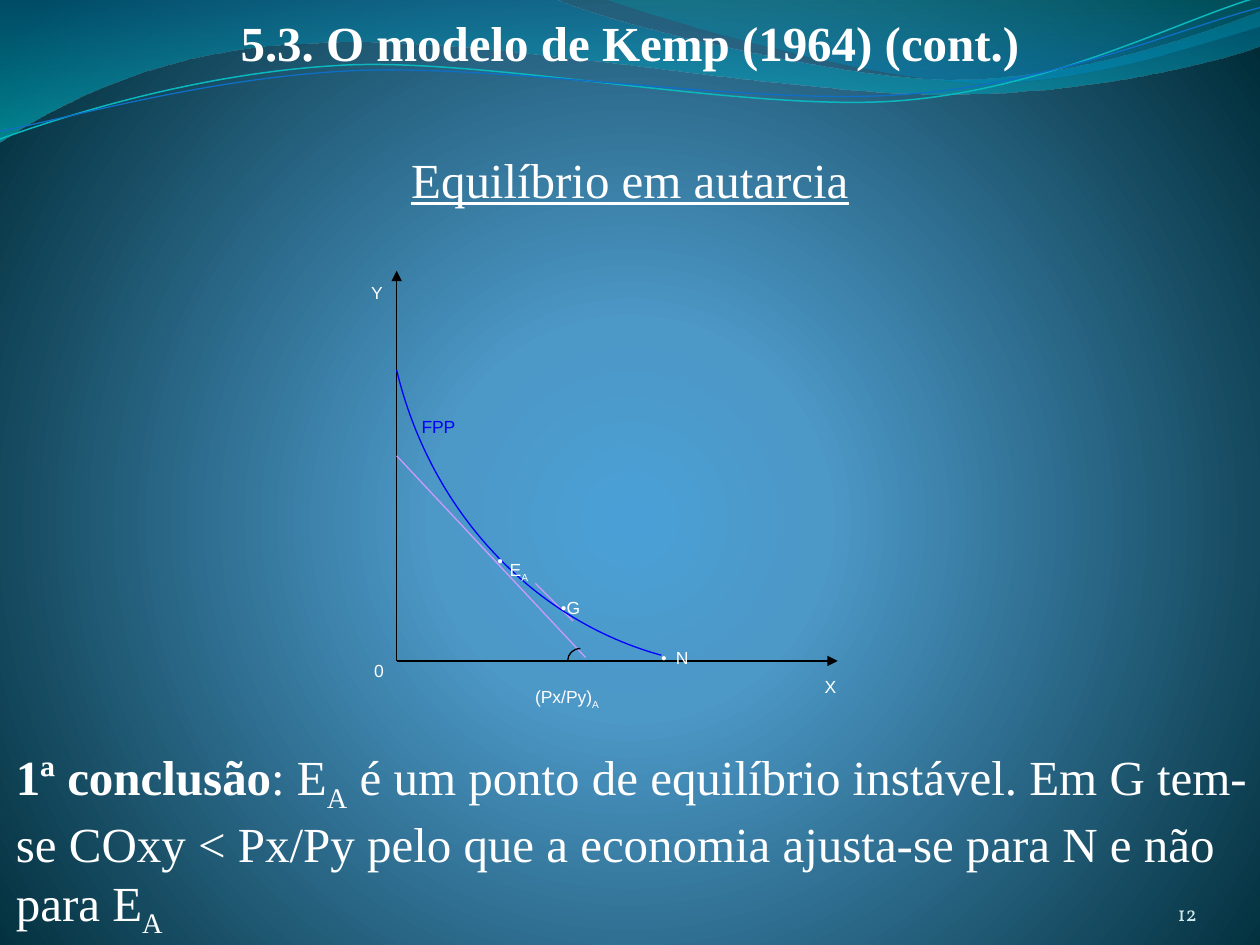
import pptx
import pptx.dml.color
import pptx.enum.shapes
import pptx.enum.text
import pptx.oxml
import pptx.oxml.ns
import pptx.util

Pt = pptx.util.Pt
RGB = pptx.dml.color.RGBColor
ALIGN = pptx.enum.text.PP_ALIGN
ANCHOR = pptx.enum.text.MSO_ANCHOR
qn = pptx.oxml.ns.qn

WHITE = RGB(0xFF, 0xFF, 0xFF)
BLACK = RGB(0x00, 0x00, 0x00)
BLUE = RGB(0x00, 0x00, 0xFF)
LILAC = RGB(0xCC, 0x99, 0xFF)
PALE = RGB(0xD1, 0xEA, 0xEE)
AQUA = RGB(0x0A, 0xB8, 0xBF)
AZURE = RGB(0x0F, 0x6F, 0xC6)
SKY = RGB(0x4A, 0xA0, 0xD6)
STEEL = RGB(0x4C, 0x98, 0xC7)
NIGHT = RGB(0x00, 0x2C, 0x38)
OCEAN = RGB(0x00, 0x74, 0xA1)
CYAN = RGB(0x00, 0xC6, 0xCF)
TEAL = RGB(0x00, 0xA1, 0xA9)
COBALT = RGB(0x00, 0x8B, 0xBF)

SERIF = "Times New Roman"
SANS = "Arial"
DOWN = '<a:lin ang="5400000" scaled="0"/>'
GLOW = '<a:path path="circle"><a:fillToRect l="10000" t="110000" r="10000" b="100000"/></a:path>'


def shade(fill, root, stops, course):
    """Fill with (percent, colour, opacity) stops; root holds the fill's XML."""
    fill.gradient()
    marks = ""
    for pos, tone, alpha in stops:
        veil = f'<a:alpha val="{alpha * 1000}"/>' if alpha < 100 else ""
        marks += f'<a:gs pos="{pos * 1000}"><a:srgbClr val="{tone}">{veil}</a:srgbClr></a:gs>'
    old = root.find(".//" + qn("a:gradFill"))
    new = pptx.oxml.parse_xml(
        f'<a:gradFill {pptx.oxml.ns.nsdecls("a")} rotWithShape="1">'
        f'<a:gsLst>{marks}</a:gsLst>{course}</a:gradFill>')
    old.getparent().replace(old, new)


def draw(slide, left, top, start, parts, close=False):
    """Draw an outline; a part is one point for a line, or three for a cubic curve."""
    spots = [(Pt(left + x), Pt(top + y))
             for x, y in [start] + [point for part in parts for point in part]]
    pen = slide.shapes.build_freeform(*spots[0], scale=1.0)
    pen.add_line_segments(spots[1:], close=close)
    shape = pen.convert_to_shape()
    shape.shadow.inherit = False
    legs = iter(shape._element.findall(".//" + qn("a:lnTo")))
    for part in parts:
        group = [next(legs) for _ in part]
        if len(part) == 3:
            bend = group[0].makeelement(qn("a:cubicBezTo"), {})
            group[0].addprevious(bend)
            for leg in group:
                bend.append(leg[0])
                leg.getparent().remove(leg)
    return shape


def curve(slide, left, top, start, parts, tone, width=0.75):
    shape = draw(slide, left, top, start, parts)
    shape.fill.background()
    shape.line.color.rgb = tone
    shape.line.width = Pt(width)


def band(slide, left, top, start, parts, stops):
    shape = draw(slide, left, top, start, parts, close=True)
    shape.line.fill.background()
    shade(shape.fill, shape._element, stops, DOWN)


def rule(slide, x1, y1, x2, y2, tone, arrow=False):
    line = slide.shapes.add_connector(
        pptx.enum.shapes.MSO_CONNECTOR.STRAIGHT, Pt(x1), Pt(y1), Pt(x2), Pt(y2))
    line.line.color.rgb = tone
    line.line.width = Pt(0.75)
    if arrow:
        stroke = line.line._get_or_add_ln()
        stroke.append(stroke.makeelement(qn("a:tailEnd"), {"type": "triangle"}))
    props = line._element.spPr
    props.append(props.makeelement(qn("a:effectLst"), {}))


def write(slide, box, parts, size, font=SERIF, tone=WHITE, align=ALIGN.LEFT,
          anchor=ANCHOR.TOP, inset=None, indent=0):
    """Place a text box; each part is (text, style), style in "", "b", "u", "sub"."""
    shape = slide.shapes.add_textbox(*map(Pt, box))
    frame = shape.text_frame
    frame.word_wrap = True
    frame.vertical_anchor = anchor
    if inset is not None:
        frame.margin_left = frame.margin_right = Pt(inset)
        frame.margin_top = frame.margin_bottom = Pt(inset)
    para = frame.paragraphs[0]
    para.alignment = align
    if indent:
        para._p.get_or_add_pPr().set("marL", str(Pt(indent)))
    for text, style in parts:
        run = para.add_run()
        run.text = text
        run.font.size = Pt(size)
        run.font.name = font
        run.font.color.rgb = tone
        run.font.bold = style == "b"
        run.font.underline = style == "u"
        if style == "sub":
            run._r.get_or_add_rPr().set("baseline", "-25000" if size > 20 else "-30000")


def waves(slide, left, top):
    band(slide, left, top, (0, 0), [
        [(316.8, -0.7)],
        [(342.7, 12.2), (478.1, 45.4), (545.8, 45.4)],
        [(614.2, 45.4), (689.8, 18.7), (720, 6.5)],
        [(720.7, 25.9)],
        [(707.8, 31.7), (626.4, 54.7), (537.1, 54)],
        [(447.8, 54), (275, 20.2), (185, 24.5)],
        [(92.9, 25.9), (33.1, 59.8), (-0.7, 81.4)],
    ], [(0, OCEAN, 45), (100, CYAN, 55)])
    band(slide, left, top, (344.9, -0.7), [
        [(366.5, 7.9), (491, 44.6), (553.7, 46.8)],
        [(616.3, 49.7), (691.9, 23), (720, 15.1)],
        [(720, 0)],
    ], [(0, TEAL, 30), (80, COBALT, 45)])
    curve(slide, left, top, (-0.4, 79.6), [
        [(34.6, 67), (113.8, 41), (199.4, 37.1)],
        [(284.4, 33.8), (427, 64), (513.4, 57.6)],
        [(599.8, 51.1), (675.4, 10.8), (718.2, -1.4)],
    ], AQUA, 0.85)
    curve(slide, left, top, (0, 74.9), [
        [(33.8, 69.1), (118.1, 43.9), (203.8, 40.3)],
        [(290.2, 36.7), (429.8, 60.5), (516.2, 54)],
        [(601.9, 48.2), (677.5, 15.1), (720, 4.3)],
    ], AZURE)


def graph(slide, left, top):
    """Autarky diagram: axes, frontier, price lines and labelled points."""
    zero = (27, 227.7)
    lines = [
        (*zero, 27, 4.7, BLACK, True),
        (*zero, 279, 227.7, BLACK, True),
        (27, 110.5, 134.9, 225.7, LILAC, False),
        (106.2, 183.3, 127.8, 204.9, LILAC, False),
    ]
    for x1, y1, x2, y2, tone, arrow in lines:
        rule(slide, left + x1, top + y1, left + x2, top + y2, tone, arrow)
    curve(slide, left, top, (178.2, 224.4),
          [[(104.8, 204.2), (46.4, 142.3), (27, 61.5)]], BLUE)
    curve(slide, left, top, (132, 220.6),
          [[(127.8, 220.6), (124.7, 223.8), (124.7, 227.7)]], BLACK)
    labels = [
        (5.3, 7.6, "Y", "", WHITE, 0),
        (264.5, 233, "X", "", WHITE, 0),
        (7, 223.6, "0", "", WHITE, 0),
        (34.1, 84, "FPP", "", BLUE, 0),
        (77.3, 161, "•", "", WHITE, 0),
        (84.5, 166, "E", "A", WHITE, 0),
        (99, 238.6, "(Px/Py)", "A", WHITE, 0),
        (106.1, 187.7, "•", "", WHITE, 7.5),
        (117, 187.7, "G", "", WHITE, 0),
        (179.5, 216, "N", "", WHITE, 0),
        (170.9, 216.2, "•", "", WHITE, 0),
    ]
    for x, y, text, sub, tone, indent in labels:
        parts = [(text, "")] + ([(sub, "sub")] if sub else [])
        width = 57.6 if len(text) > 3 else 43.2
        write(slide, (left + x, top + y, width, 28.8), parts, 10,
              SERIF if text == "•" else SANS, tone, indent=indent)


def main():
    deck = pptx.Presentation()
    deck.slide_width, deck.slide_height = Pt(720), Pt(540)
    slide = deck.slides.add_slide(deck.slide_layouts[6])
    shade(slide.background.fill, slide._element,
          [(0, SKY, 100), (25, STEEL, 100), (100, NIGHT, 100)], GLOW)
    waves(slide, 0, 0)
    write(slide, (0, 3.6, 720, 41), [("5.3. O modelo de Kemp (1964) (cont.)", "b")],
          28, align=ALIGN.CENTER)
    write(slide, (624, 500.4, 60, 28.8), [("12", "")], 12, "Vollkorn", PALE,
          ALIGN.RIGHT, ANCHOR.BOTTOM, 0)
    write(slide, (0, 81.7, 720, 41), [("Equilíbrio em autarcia", "u")],
          28, align=ALIGN.CENTER, anchor=ANCHOR.MIDDLE)
    write(slide, (2, 427.4, 718, 108.7), [
        ("1ª conclusão", "b"),
        (": E", ""),
        ("A", "sub"),
        (" é um ponto de equilíbrio instável. Em G tem-se COxy < Px/Py "
         "pelo que a economia ajusta-se para N e não para E", ""),
        ("A", "sub"),
    ], 28, anchor=ANCHOR.MIDDLE)
    graph(slide, 199.7, 150)
    deck.save("out.pptx")


if __name__ == "__main__":
    main()
